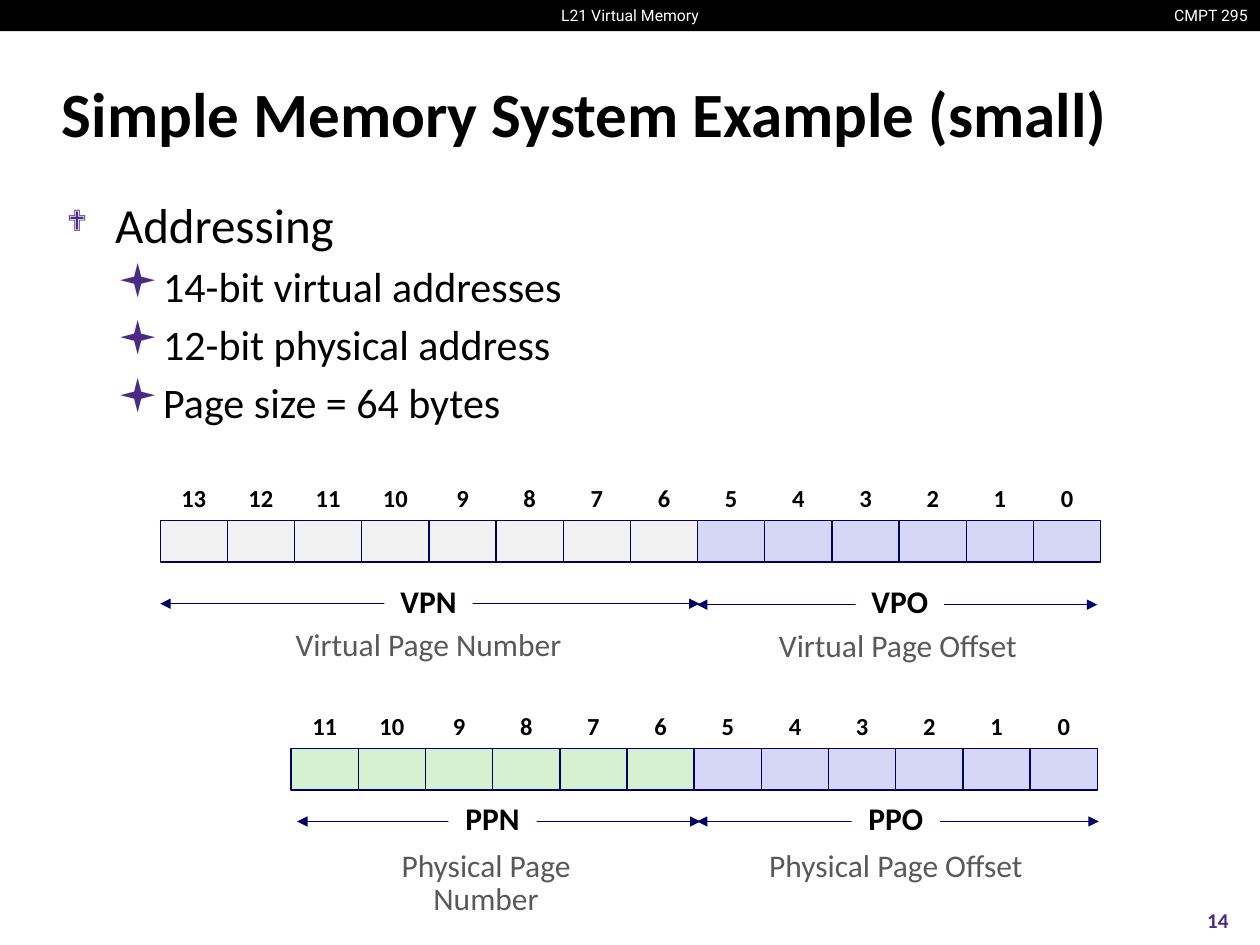
import pptx
import pptx.dml.color
import pptx.enum.shapes
import pptx.enum.text
import pptx.oxml.ns
import pptx.util
from lxml import etree

Cm, Pt = pptx.util.Cm, pptx.util.Pt
ALIGN = pptx.enum.text.PP_ALIGN
ANCHOR = pptx.enum.text.MSO_ANCHOR
RECTANGLE = pptx.enum.shapes.MSO_SHAPE.RECTANGLE
STRAIGHT = pptx.enum.shapes.MSO_CONNECTOR.STRAIGHT

# Content
COURSE, LECTURE, PAGE_NUMBER = "CMPT 295", "L21 Virtual Memory", "14"
TITLE = "Simple Memory System Example (small)"
OUTLINE = [
    (0, "Addressing"),
    (1, "14-bit virtual addresses"),
    (1, "12-bit physical address"),
    (1, "Page size = 64 bytes"),
]
# Per outline level: size, bullet, bullet percent, left margin, hanging indent
LEVELS = [(28, "❖", 60, 0.97, 0.97), (24, "▪", 110, 1.8, 0.79)]

BLACK, WHITE, PURPLE, NAVY, GRAY = "000000", "FFFFFF", "4B2A85", "000066", "595959"
PALE_GRAY, LAVENDER, GREEN = "F2F2F2", "D6D6F5", "D5F1CF"

# Lengths in centimetres; label and caption are placed by their centres
ADDRESSES = [
    dict(left=3.23, bits_top=10.49, label_top=11.71, fields=[
        dict(label="VPN", caption="Virtual Page Number", bits=8, fill=PALE_GRAY,
             arrow=(3.23, 14.1, 12.17), label_x=8.64, caption_at=(8.64, 12.57)),
        dict(label="VPO", caption="Virtual Page Offset", bits=6, fill=LAVENDER,
             arrow=(14.05, 22.12, 12.19), label_x=18.14, caption_at=(18.1, 12.6)),
    ]),
    dict(left=5.87, bits_top=15.09, label_top=16.08, fields=[
        dict(label="PPN", caption="Physical Page Number", bits=6, fill=GREEN,
             arrow=(5.99, 14.12, 16.56), label_x=9.93, caption_at=(9.8, 17.02)),
        dict(label="PPO", caption="Physical Page Offset", bits=6, fill=LAVENDER,
             arrow=(14.05, 22.15, 16.56), label_x=18.06, caption_at=(18.06, 17.02)),
    ]),
]
BIT_WIDTH, BIT_HEIGHT = 18.96 / 14, 0.84
LABEL_WIDTH, CAPTION_WIDTH, LABEL_HEIGHT = 1.78, 6, 0.91


def color(value):
    return pptx.dml.color.RGBColor.from_string(value)


def add_rectangle(shapes, left, top, width, height, fill, line=None):
    box = shapes.add_shape(RECTANGLE, Cm(left), Cm(top), Cm(width), Cm(height))
    box.shadow.inherit = False
    box.fill.solid()
    box.fill.fore_color.rgb = color(fill)
    if line:
        box.line.color.rgb = color(line)
        box.line.width = Pt(0.75)
    else:
        box.line.fill.background()
    return box


def write(para, text, size=18, bold=False, ink=BLACK, font="Calibri",
          align=ALIGN.LEFT, spacing=None):
    para.alignment = align
    para.line_spacing = spacing
    span = para.add_run()
    span.text = text
    span.font.name, span.font.size, span.font.bold = font, Pt(size), bold
    span.font.color.rgb = color(ink)


def add_text(shapes, left, top, width, height, text, wrap=False,
             anchor=ANCHOR.TOP, **style):
    box = shapes.add_textbox(Cm(left), Cm(top), Cm(width), Cm(height))
    box.text_frame.word_wrap = wrap
    box.text_frame.vertical_anchor = anchor
    write(box.text_frame.paragraphs[0], text, **style)
    return box


def add_bullet(para, level):
    size, symbol, percent, margin, hanging = LEVELS[level]
    properties = para._p.get_or_add_pPr()
    properties.set("marL", str(Cm(margin)))
    properties.set("indent", str(-Cm(hanging)))
    ink = add_element(properties, "a:buClr")
    add_element(ink, "a:srgbClr", val=PURPLE)
    add_element(properties, "a:buSzPct", val=str(percent * 1000))
    add_element(properties, "a:buFont", typeface="Wingdings")
    add_element(properties, "a:buChar", char=symbol)


def add_element(parent, tag, **attributes):
    return etree.SubElement(parent, pptx.oxml.ns.qn(tag), **attributes)


def add_double_arrow(shapes, start, end, height):
    arrow = shapes.add_connector(STRAIGHT, Cm(start), Cm(height), Cm(end), Cm(height))
    arrow.line.color.rgb = color(NAVY)
    arrow.line.width = Pt(0.75)
    line = arrow.line._get_or_add_ln()
    for tag in ("a:headEnd", "a:tailEnd"):
        add_element(line, tag, type="triangle")
    add_element(arrow._element.spPr, "a:effectLst")


def add_address(page, left, bits_top, label_top, fields):
    shapes = page.shapes.add_group_shape().shapes
    centred = dict(align=ALIGN.CENTER, spacing=0.88)

    # Numbered bits, highest first
    fills = [field["fill"] for field in fields for _ in range(field["bits"])]
    for index, fill in enumerate(fills):
        x = left + index * BIT_WIDTH
        add_rectangle(shapes, x, bits_top, BIT_WIDTH, BIT_HEIGHT, fill, NAVY)
        add_text(shapes, x, bits_top - BIT_HEIGHT, BIT_WIDTH, BIT_HEIGHT,
                 str(len(fills) - 1 - index), anchor=ANCHOR.MIDDLE,
                 size=14, bold=True, **centred)

    # Arrow, label and caption of each field
    for field in fields:
        add_double_arrow(shapes, *field["arrow"])
        label = add_rectangle(shapes, field["label_x"] - LABEL_WIDTH / 2, label_top,
                              LABEL_WIDTH, LABEL_HEIGHT, WHITE)
        label.text_frame.word_wrap = False
        label.text_frame.vertical_anchor = ANCHOR.TOP
        write(label.text_frame.paragraphs[0], field["label"], bold=True, **centred)
        x, top = field["caption_at"]
        add_text(shapes, x - CAPTION_WIDTH / 2, top, CAPTION_WIDTH, LABEL_HEIGHT,
                 field["caption"], ink=GRAY, **centred)


def main():
    deck = pptx.Presentation()
    deck.slide_width, deck.slide_height = Cm(25.4), Cm(19.05)
    page = deck.slides.add_slide(deck.slide_layouts[6])

    # Header bar
    add_rectangle(page.shapes, 0, 0, 25.4, 0.63, BLACK)
    header = dict(size=9, font="Roboto", ink=WHITE)
    add_text(page.shapes, 23.34, 0, 2.06, 0.63, COURSE, align=ALIGN.RIGHT, **header)
    add_text(page.shapes, 11.05, 0, 3.3, 0.63, LECTURE, align=ALIGN.CENTER, **header)

    # Title, outline and page number
    add_text(page.shapes, 1, 1.22, 23.34, 2.1, TITLE, wrap=True,
             anchor=ANCHOR.MIDDLE, size=36, bold=True)
    outline = page.shapes.add_textbox(Cm(1.1), Cm(3.8), Cm(23.24), Cm(5.6)).text_frame
    outline.word_wrap = True
    for index, (level, text) in enumerate(OUTLINE):
        para = outline.add_paragraph() if index else outline.paragraphs[0]
        para.level = level
        if index:
            para.space_before = Pt(4.2)
        add_bullet(para, level)
        write(para, text, size=LEVELS[level][0])
    add_text(page.shapes, 23.7, 18.03, 1.7, 1.02, PAGE_NUMBER, wrap=True,
             anchor=ANCHOR.MIDDLE, size=12, bold=True, ink=PURPLE, align=ALIGN.CENTER)

    # Address layouts
    for address in ADDRESSES:
        add_address(page, **address)

    deck.save("out.pptx")


if __name__ == "__main__":
    main()
